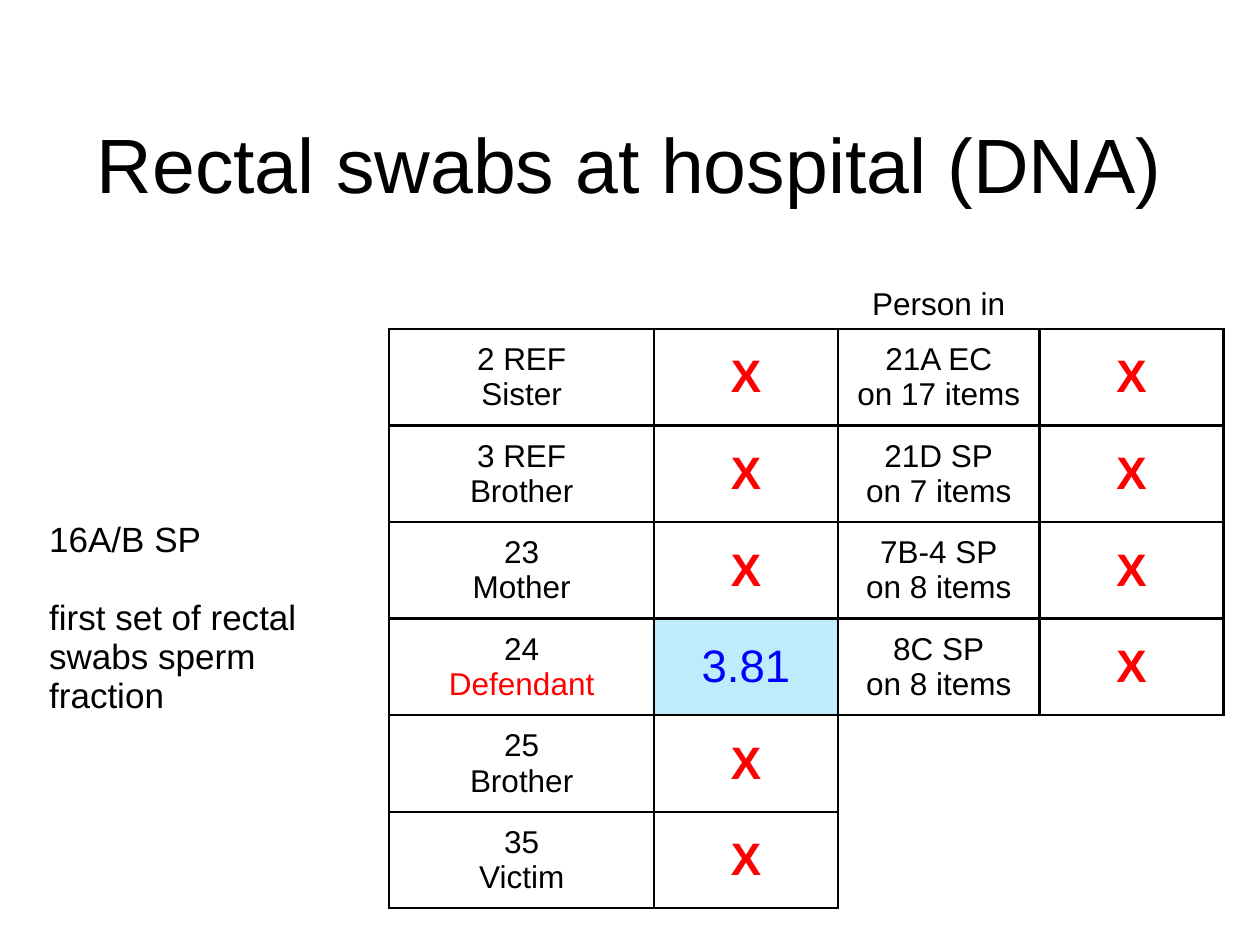
from lxml import etree
from pptx import Presentation
from pptx.dml.color import RGBColor
from pptx.enum.text import MSO_ANCHOR, PP_ALIGN
from pptx.oxml.ns import qn
from pptx.util import Inches, Pt

MID, LOW = MSO_ANCHOR.MIDDLE, MSO_ANCHOR.BOTTOM
LEFT, CENTER = PP_ALIGN.LEFT, PP_ALIGN.CENTER
BLACK, RED, BLUE, SKY = "000000", "FF0000", "0000FF", "BFEBFB"

TITLE = "Rectal swabs at hospital (DNA)"
HEAD = "Person in"
SAMPLE = "16A/B SP\nfirst set of rectal swabs sperm fraction"
PEOPLE = [
    ("2 REF\nSister", "X"),
    ("3 REF\nBrother", "X"),
    ("23\nMother", "X"),
    ("24\nDefendant", "3.81"),
    ("25\nBrother", "X"),
    ("35\nVictim", "X"),
]
ITEMS = [
    ("21A EC\non 17 items", "X"),
    ("21D SP\non 7 items", "X"),
    ("7B-4 SP\non 8 items", "X"),
    ("8C SP\non 8 items", "X"),
]
COLS = [2.8, 2.1, 1.46, 1.6, 1.46]
TOP, ROW = 0.48, 4.6 / len(PEOPLE)
SIDES = {"lnL": (0, -1), "lnR": (0, 1), "lnT": (-1, 0), "lnB": (1, 0)}


def rgb(code):
    return RGBColor.from_string(code)


def write(frame, text, size, color=BLACK, align=CENTER, bold=False):
    frame.text = text
    for para in frame.paragraphs:
        para.alignment = align
        for run in para.runs:
            font = run.font
            font.name, font.size, font.bold = "Arial", Pt(size), bold
            font.color.rgb = rgb(color)


def boxed(row, col):
    return (col in (1, 2) and 1 <= row <= len(PEOPLE)
            or col in (3, 4) and 1 <= row <= len(ITEMS))


def border(cell, row, col):
    props = cell._tc.get_or_add_tcPr()
    for tag, (down, over) in SIDES.items():
        line = etree.SubElement(props, qn("a:" + tag), w=str(Pt(1.5)))
        if boxed(row, col) or boxed(row + down, col + over):
            fill = etree.SubElement(line, qn("a:solidFill"))
            etree.SubElement(fill, qn("a:srgbClr"), val=BLACK)
        else:
            etree.SubElement(line, qn("a:noFill"))


def result(cell, value):
    match = value != "X"
    write(cell.text_frame, value, 26, BLUE if match else RED, bold=not match)
    if match:
        cell.fill.solid()
        cell.fill.fore_color.rgb = rgb(SKY)


def build():
    deck = Presentation()
    deck.slide_width, deck.slide_height = Inches(10), Inches(7.5)
    slide = deck.slides.add_slide(deck.slide_layouts[5])

    title = slide.shapes.title
    title.left, title.top = Inches(0.05), Inches(0.67)
    title.width, title.height = Inches(9.9), Inches(1.25)
    title.text_frame.vertical_anchor = MID
    write(title.text_frame, TITLE, 44)

    count = len(PEOPLE) + 1
    table = slide.shapes.add_table(
        count, len(COLS), Inches(0.29), Inches(2.13),
        Inches(sum(COLS)), Inches(TOP + ROW * len(PEOPLE))).table
    table.first_row = table.horz_banding = False
    for col, width in zip(table.columns, COLS):
        col.width = Inches(width)
    for i, row in enumerate(table.rows):
        row.height = Inches(ROW if i else TOP)
        for j, cell in enumerate(row.cells):
            border(cell, i, j)
            cell.fill.background()
            cell.vertical_anchor = MID if i else LOW

    write(table.cell(0, 3).text_frame, HEAD, 18)
    side = table.cell(1, 0)
    side.merge(table.cell(count - 1, 0))
    write(side.text_frame, SAMPLE, 20, align=LEFT)
    side.text_frame.paragraphs[1].space_before = Pt(22)

    for start, pairs in ((1, PEOPLE), (3, ITEMS)):
        for i, (name, value) in enumerate(pairs, 1):
            write(table.cell(i, start).text_frame, name, 18)
            result(table.cell(i, start + 1), value)
            if name.endswith("Defendant"):
                last = table.cell(i, start).text_frame.paragraphs[1]
                last.runs[0].font.color.rgb = rgb(RED)

    deck.save("out.pptx")


if __name__ == "__main__":
    build()
